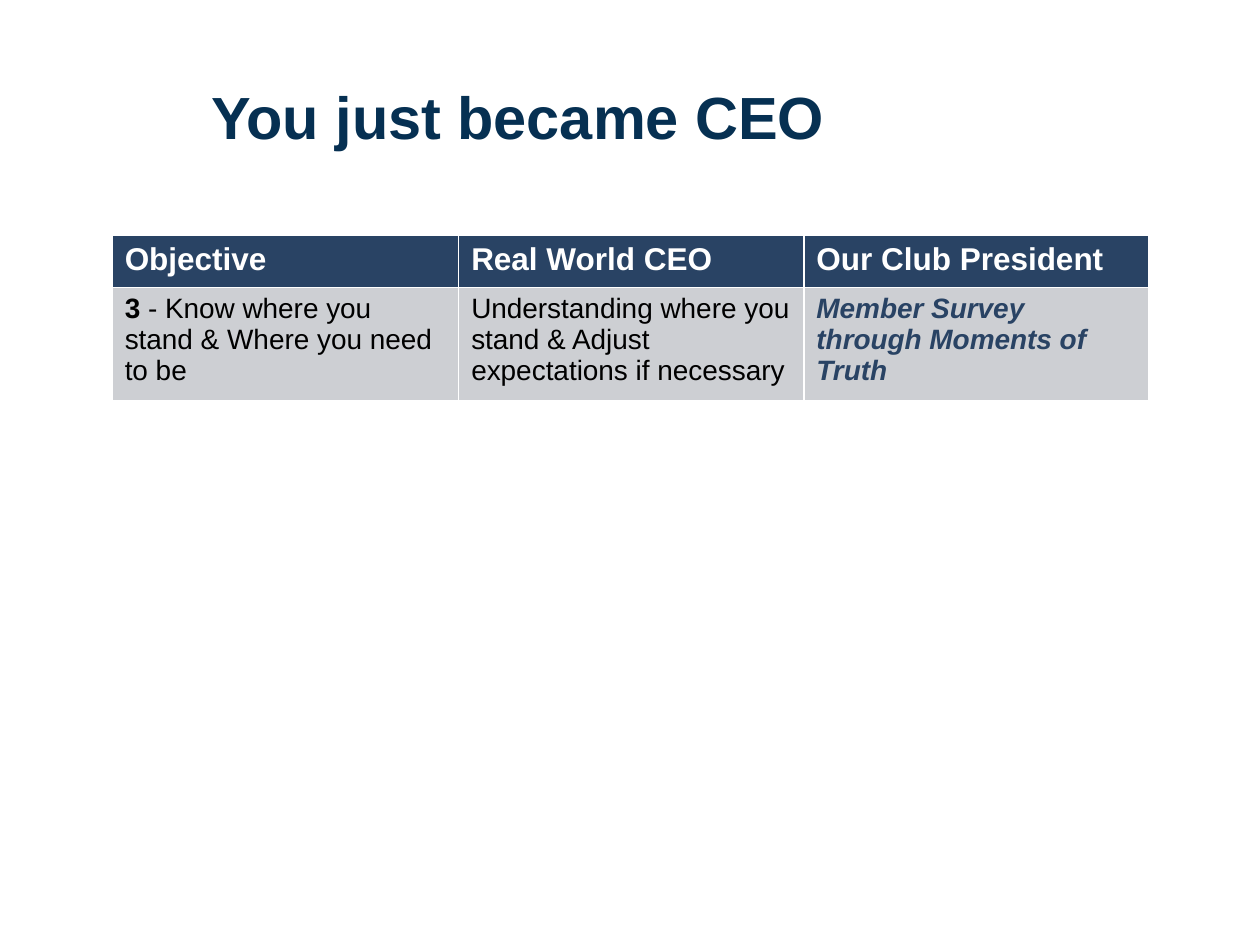
from pptx import Presentation, util as u
from pptx.dml.color import RGBColor
from pptx.enum import text

hues = {"title": "063052", "navy": "294364", "grey": "CDCFD3",
        "white": "FFFFFF", "black": "000000"}


def write(para, words, hue, size, **form):
    run = para.add_run()
    run.text = words
    run.font.color.rgb = RGBColor.from_string(hues[hue])
    form = {"name": "Arial", "size": u.Pt(size), "bold": False, **form}
    for key, val in form.items():
        setattr(run.font, key, val)


deck = Presentation()
deck.slide_width, deck.slide_height = u.Inches(10), u.Inches(7.5)
slide = deck.slides.add_slide(deck.slide_layouts[6])

# Title
box = slide.shapes.add_textbox(u.Inches(1.58), u.Inches(0.58),
                               u.Inches(8.17), u.Inches(0.67))
frame = box.text_frame
frame.word_wrap = True
frame.vertical_anchor = text.MSO_ANCHOR.MIDDLE
write(frame.paragraphs[0], "You just became CEO", "title", 34, bold=True)

# Table: each cell is a list of runs (words, colour, size, format)
bold = {"bold": True}
heads = ["Objective", "Real World CEO", "Our Club President"]
rows = [
    [[(head, "white", 18, bold)] for head in heads],
    [
        [("3", "black", 16, bold),
         (" - Know where you stand & Where you need to be", "black", 16, {})],
        [("Understanding where you stand & Adjust expectations if necessary",
          "black", 16, {})],
        [("Member Survey through Moments of Truth", "navy", 16,
          {"bold": True, "italic": True})],
    ],
]
# The default table style gives the white rules between cells
grid = slide.shapes.add_table(2, 3, u.Inches(0.89), u.Inches(1.87),
                              u.Inches(8.23), u.Inches(0.82)).table
for col, wide in zip(grid.columns, (2.75, 2.74, 2.74)):
    col.width = u.Inches(wide)
for r, (row, fill) in enumerate(zip(rows, ("navy", "grey"))):
    grid.rows[r].height = u.Inches(0.41)
    for c, runs in enumerate(row):
        cell = grid.cell(r, c)
        cell.fill.solid()
        cell.fill.fore_color.rgb = RGBColor.from_string(hues[fill])
        for words, hue, size, form in runs:
            write(cell.text_frame.paragraphs[0], words, hue, size, **form)

deck.save("out.pptx")
